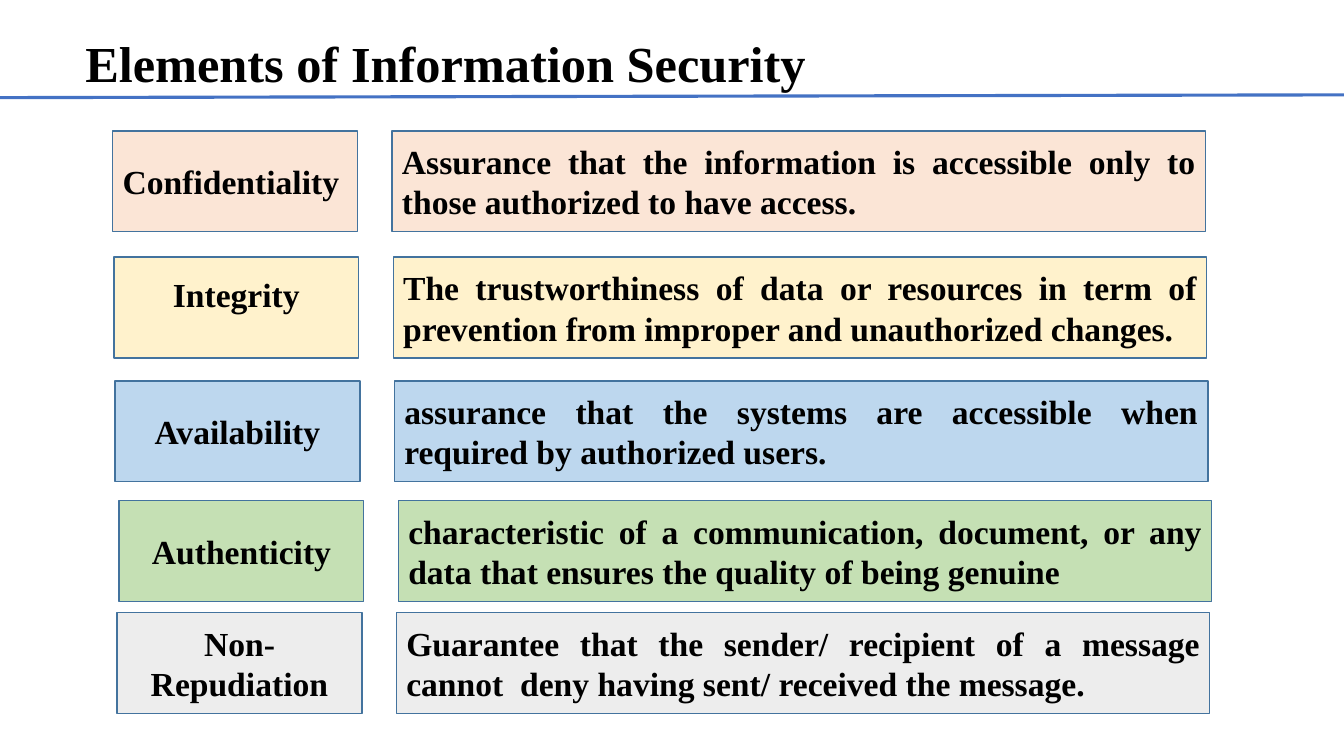
from pptx import Presentation
from pptx.dml.color import RGBColor
from pptx.enum.shapes import MSO_CONNECTOR as Connector, MSO_SHAPE as Shape
from pptx.enum.text import MSO_ANCHOR as Anchor, PP_ALIGN as Align
from pptx.oxml.ns import qn
from pptx.util import Cm, Pt

TITLE = "Elements of Information Security"

# name, definition, colour, left and top of the row in cm
ELEMENTS = [
    ("Confidentiality ",
     "Assurance that the information is accessible only to those authorized to have access.",
     "peach", 2.84, 3.3),
    ("Integrity",
     "The trustworthiness of data or resources in term of prevention from improper and unauthorized changes.",
     "yellow", 2.87, 6.48),
    ("Availability",
     "assurance that the systems are accessible when required by authorized users.",
     "sky", 2.9, 9.6),
    ("Authenticity",
     "characteristic of a communication, document, or any data that ensures the quality of being genuine",
     "green", 3.0, 12.62),
    ("Non-Repudiation",
     "Guarantee that the sender/ recipient of a message cannot  deny having sent/ received the message.",
     "grey", 2.95, 15.44),
]
RAISED_NAME = "Integrity"

COLOURS = {
    "text": "000000", "border": "43739E", "rule": "4472C4",
    "peach": "FBE5D6", "yellow": "FFF2CC", "sky": "BDD7EE",
    "green": "C5E0B4", "grey": "EDEDED",
}
FONT = "Times New Roman"
SLIDE_WIDTH, SLIDE_HEIGHT = 33.87, 19.05
NAME_WIDTH, DEFINITION_WIDTH, ROW_HEIGHT = 6.17, 20.5, 2.54
DEFINITION_OFFSET = 7.04


def colour(key):
    return RGBColor.from_string(COLOURS[key])


def write(box, text, size=24, align=Align.LEFT, anchor=Anchor.MIDDLE, spacing=1.0):
    frame = box.text_frame
    frame.word_wrap = True
    frame.vertical_anchor = anchor
    paragraph = frame.paragraphs[0]
    paragraph.alignment = align
    paragraph.line_spacing = spacing
    run = paragraph.add_run()
    run.text = text
    run.font.name = FONT
    run.font.size = Pt(size)
    run.font.bold = True
    run.font.color.rgb = colour("text")


def add_panel(slide, left, top, width, fill, text, **text_format):
    panel = slide.shapes.add_shape(
        Shape.RECTANGLE, Cm(left), Cm(top), Cm(width), Cm(ROW_HEIGHT))
    panel.shadow.inherit = False
    panel.fill.solid()
    panel.fill.fore_color.rgb = colour(fill)
    panel.line.color.rgb = colour("border")
    panel.line.width = Pt(1)
    write(panel, text, **text_format)
    return panel


def add_rule(slide):
    rule = slide.shapes.add_connector(
        Connector.STRAIGHT, Cm(SLIDE_WIDTH), Cm(2.39), Cm(0), Cm(2.46))
    rule.line.color.rgb = colour("rule")
    rule.line.width = Pt(2.25)
    properties = rule.line._get_or_add_ln().getparent()
    properties.append(properties.makeelement(qn("a:effectLst"), {}))


def main():
    deck = Presentation()
    deck.slide_width, deck.slide_height = Cm(SLIDE_WIDTH), Cm(SLIDE_HEIGHT)
    slide = deck.slides.add_slide(deck.slide_layouts[6])

    title = slide.shapes.add_textbox(Cm(1.9), Cm(0.64), Cm(29.21), Cm(2.08))
    write(title, TITLE, size=36, spacing=0.9)

    for name, definition, fill, left, top in ELEMENTS:
        raised = name == RAISED_NAME
        name_panel = add_panel(
            slide, left, top, NAME_WIDTH, fill, name, align=Align.CENTER,
            anchor=Anchor.BOTTOM if raised else Anchor.MIDDLE)
        if raised:
            name_panel.text_frame.margin_bottom = Cm(1.1)
        add_panel(slide, left + DEFINITION_OFFSET, top, DEFINITION_WIDTH, fill,
                  definition, align=Align.JUSTIFY)

    add_rule(slide)
    deck.save("out.pptx")


if __name__ == "__main__":
    main()
